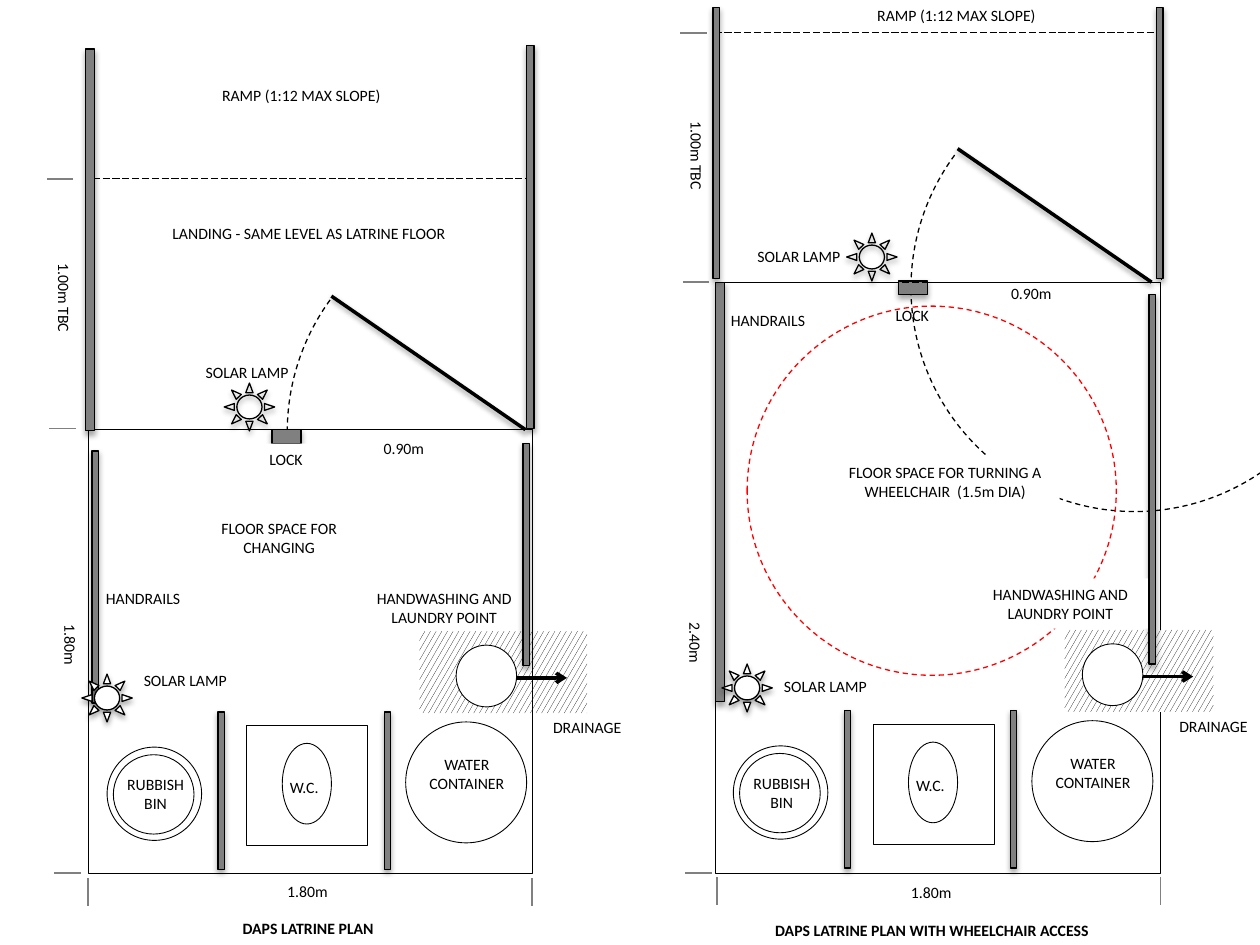
from lxml.etree import SubElement
from pptx import Presentation
from pptx.dml.color import RGBColor
from pptx.enum.dml import MSO_LINE, MSO_PATTERN
from pptx.enum.shapes import MSO_CONNECTOR, MSO_SHAPE
from pptx.enum.text import MSO_AUTO_SIZE, PP_ALIGN
from pptx.oxml.ns import qn
from pptx.util import Emu, Pt

PX = 9144  # 100 px to the inch
COLORS = {"ink": "000000", "paper": "FFFFFF", "rail": "808080", "turning": "FF0000"}


def color(name):
    return RGBColor.from_string(COLORS[name])


class Plan:
    """Style and current slide of the floor plans."""
    font, size = "Calibri", 9

    def __init__(self, slide):
        self.shapes = slide.shapes

    def effects(self, shape, shadow):
        lst = SubElement(shape._element.spPr, qn("a:effectLst"))
        if shadow:
            outer = SubElement(lst, qn("a:outerShdw"), blurRad="40000", dist="23000",
                               dir="5400000", rotWithShape="0")
            black = SubElement(outer, qn("a:srgbClr"), val=COLORS["ink"])
            SubElement(black, qn("a:alpha"), val="35000")

    def shape(self, kind, x, y, w, h, fill=None, line="ink", width=0.5, dash=None, shadow=False):
        sp = self.shapes.add_shape(kind, *(Emu(v * PX) for v in (x, y, w, h)))
        if fill:
            sp.fill.solid()
            sp.fill.fore_color.rgb = color(fill)
        else:
            sp.fill.background()
        sp.line.color.rgb = color(line)
        sp.line.width = Pt(width)
        if dash:
            sp.line.dash_style = dash
        self.effects(sp, shadow)
        return sp

    def rect(self, *box, **style):
        return self.shape(MSO_SHAPE.RECTANGLE, *box, **style)

    def oval(self, *box, **style):
        return self.shape(MSO_SHAPE.OVAL, *box, **style)

    def rail(self, *box):
        self.rect(*box, fill="rail", width=0.75, shadow=True)

    def lamp(self, x, y, fill=None):
        self.shape(MSO_SHAPE.SUN, x, y, 40, 38, fill=fill, width=0.75, shadow=True)

    def swing(self, x, y, start, end):
        sp = self.shape(MSO_SHAPE.ARC, x, y, 355, 355, width=0.75, dash=MSO_LINE.DASH)
        for i, degrees in enumerate((start, end)):
            sp.adjustments[i] = degrees * 0.6

    def hatch(self, *box):
        sp = self.rect(*box)
        sp.fill.patterned()
        sp.fill.pattern = MSO_PATTERN.LARGE_CONFETTI
        sp.fill.fore_color.rgb = color("ink")
        sp.fill.back_color.rgb = color("paper")
        sp.line.fill.background()

    def line(self, x1, y1, x2, y2, stroke="ink", width=2, arrow=False, shadow=False):
        c = self.shapes.add_connector(MSO_CONNECTOR.STRAIGHT,
                                      *(Emu(v * PX) for v in (x1, y1, x2, y2)))
        c.line.color.rgb = color(stroke)
        c.line.width = Pt(width)
        if arrow:
            SubElement(c._element.spPr.find(qn("a:ln")), qn("a:tailEnd"), type="arrow")
        self.effects(c, shadow)

    def label(self, x, y, w, h, text, fill=None, bold=False, turn=0):
        tb = self.shapes.add_textbox(*(Emu(v * PX) for v in (x, y, w, h)))
        tb.rotation = turn
        if fill:
            tb.fill.solid()
            tb.fill.fore_color.rgb = color(fill)
        tf = tb.text_frame
        tf.word_wrap = True
        tf.auto_size = MSO_AUTO_SIZE.SHAPE_TO_FIT_TEXT
        for i, words in enumerate(text.split("\n")):
            p = tf.add_paragraph() if i else tf.paragraphs[0]
            p.alignment = PP_ALIGN.CENTER
            r = p.add_run()
            r.text = words
            r.font.name, r.font.size, r.font.bold = self.font, Pt(self.size), bold
            r.font.color.rgb = color("ink")

    def fixtures(self, dx, dy):
        """Everything that both latrines share, moved by dx and dy."""
        # Toilet, rubbish bin and water container
        self.oval(224 + dx, 590 + dy, 39, 64)
        self.rect(196 + dx, 576 + dy, 96, 95)
        self.oval(85 + dx, 593 + dy, 75, 74)
        self.oval(90 + dx, 599 + dy, 64, 63)
        self.oval(322 + dx, 573 + dy, 96, 96)
        self.label(324 + dx, 594 + dy, 93, 40, "WATER CONTAINER")
        self.label(77 + dx, 610 + dy, 93, 40, "RUBBISH\nBIN")
        self.label(195 + dx, 612 + dy, 93, 25, "W.C.")
        # Partition rails
        for x in (173, 305):
            self.rail(x + dx, 565 + dy, 5, 125)
        # Basin and its drain
        self.line(390 + dx, 538 + dy, 450 + dx, 538 + dy, arrow=True)
        self.oval(362 + dx, 512 + dy, 48, 49, fill="paper")
        self.label(428 + dx, 565 + dy, 76, 25, "DRAINAGE")

    def ticks(self, left, right, levels, foot):
        """Dimension marks beside and below a plan."""
        for x, y in levels:
            self.line(x + 21, y, x, y, stroke="rail", width=1)
        for x in (left, right):
            self.line(x, foot, x, foot + 22, stroke="rail", width=1)


def draw_standard(s):
    # Door swing, room and fixtures
    s.swing(228, 165, 180, 217)
    s.hatch(333, 501, 133, 65)
    s.rect(70, 341, 353, 352)
    s.fixtures(0, 0)
    s.rail(73, 358, 5, 200)
    s.rail(415, 352, 5, 176)
    s.label(283, 462, 139, 40, "HANDWASHING AND LAUNDRY POINT")
    s.label(165, 407, 113, 40, "FLOOR SPACE FOR CHANGING", fill="paper")
    s.label(57, 462, 113, 25, "HANDRAILS")
    # Door and lock
    s.line(417, 341, 263, 235, shadow=True)
    s.label(228, 343, 185, 25, "0.90m")
    s.rail(216, 341, 23, 11)
    s.label(170, 352, 114, 25, "LOCK", fill="paper")
    # Landing and ramp
    s.rect(73, 142, 349, 199, dash=MSO_LINE.LONG_DASH)
    s.label(118, 173, 254, 25, "LANDING - SAME LEVEL AS LATRINE FLOOR", fill="paper")
    s.label(133, 63, 212, 25, "RAMP (1:12 MAX SLOPE)", fill="paper")
    s.rail(68, 39, 7, 303)
    s.rail(418, 36, 6, 304)
    # Lamps
    s.label(147, 283, 98, 25, "SOLAR LAMP")
    s.label(104, 527, 86, 25, "SOLAR LAMP")
    s.lamp(178, 304)
    s.lamp(65, 535, fill="paper")
    # Dimensions and caption
    s.label(-75, 224, 252, 25, "1.00m TBC", turn=90)
    s.label(-50, 499, 212, 25, "1.80m", turn=90)
    s.label(138, 695, 212, 25, "1.80m")
    s.ticks(70, 422, [(37, 142), (39, 340), (43, 693)], 697)
    s.label(155, 724, 179, 25, "DAPS LATRINE PLAN", fill="paper", bold=True)


def draw_wheelchair(s):
    # Door swing, room, turning circle and fixtures
    s.swing(723, 51, 0, 217)
    s.rect(568, 224, 353, 469)
    s.oval(593, 243, 293, 293, line="turning", width=0.75, dash=MSO_LINE.DASH)
    s.hatch(845, 500, 118, 65)
    s.fixtures(497, -1)
    s.rail(568, 224, 7, 333)
    s.rail(912, 234, 5, 293)
    s.label(659, 362, 182, 40, "FLOOR SPACE FOR TURNING A WHEELCHAIR  (1.5m DIA)", fill="paper")
    s.label(772, 459, 139, 40, "HANDWASHING AND LAUNDRY POINT", fill="paper")
    s.label(553, 242, 113, 25, "HANDRAILS")
    # Door and lock
    s.line(914, 224, 760, 118, shadow=True)
    s.label(726, 220, 185, 25, "0.90m")
    s.rail(713, 223, 23, 11)
    s.label(667, 238, 114, 25, "LOCK")
    # Landing and ramp
    s.rect(568, 26, 354, 198, dash=MSO_LINE.LONG_DASH)
    s.label(653, 0, 212, 25, "RAMP (1:12 MAX SLOPE)", fill="paper")
    for x in (566, 918):
        s.rail(x, 6, 5, 215)
    # Lamps
    s.label(591, 191, 86, 25, "SOLAR LAMP")
    s.label(612, 532, 86, 25, "SOLAR LAMP")
    s.lamp(672, 185)
    s.lamp(573, 527, fill="paper")
    # Dimensions and caption
    s.label(427, 111, 252, 25, "1.00m TBC", turn=90)
    s.label(446, 498, 212, 25, "2.40m", turn=90)
    s.label(633, 696, 212, 25, "1.80m")
    s.ticks(569, 921, [(540, 26), (542, 224), (544, 693)], 696)
    s.label(593, 726, 293, 25, "DAPS LATRINE PLAN WITH WHEELCHAIR ACCESS", fill="paper", bold=True)


def main():
    prs = Presentation()
    prs.slide_width, prs.slide_height = Emu(1000 * PX), Emu(750 * PX)
    s = Plan(prs.slides.add_slide(prs.slide_layouts[6]))
    draw_standard(s)
    draw_wheelchair(s)
    prs.save("out.pptx")


if __name__ == "__main__":
    main()
